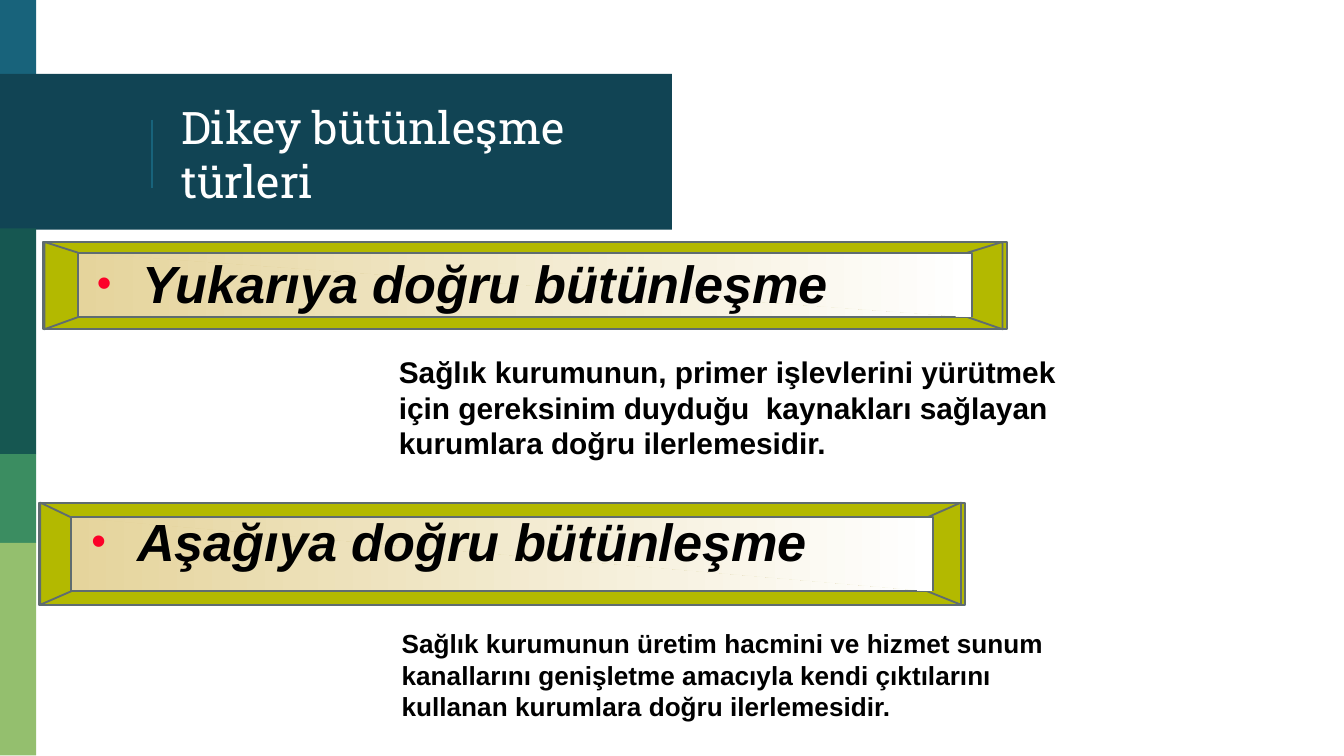
from lxml import etree
from pptx import Presentation
from pptx.dml.color import RGBColor
from pptx.enum import shapes, text
from pptx.oxml import ns
from pptx.util import Inches, Pt

BLUE = RGBColor(0x18, 0x63, 0x7B)
NAVY = RGBColor(0x11, 0x44, 0x54)
PINE = RGBColor(0x16, 0x57, 0x51)
GREEN = RGBColor(0x3B, 0x8D, 0x61)
LIME = RGBColor(0x94, 0xBF, 0x6E)
OLIVE = RGBColor(0xB3, 0xB9, 0x00)
SAND = RGBColor(0xE5, 0xD4, 0x9C)
SLATE = RGBColor(0x5F, 0x6C, 0x70)
RED = RGBColor(0xFC, 0x01, 0x28)
WHITE = RGBColor(0xFF, 0xFF, 0xFF)
BLACK = RGBColor(0, 0, 0)

# Widescreen slide, 16 to 9
deck = Presentation()
deck.slide_width, deck.slide_height = Inches(10), Inches(10 * 9 / 16)
slide = deck.slides.add_slide(deck.slide_layouts[6])
items = slide.shapes


def add_rect(x, y, w, h, color):
    box = items.add_shape(shapes.MSO_SHAPE.RECTANGLE, *map(Inches, (x, y, w, h)))
    box.shadow.inherit = False
    box.fill.solid()
    box.fill.fore_color.rgb = color
    box.line.fill.background()
    return box


def write(box, words, font, frame):
    body = box.text_frame
    for name, value in frame.items():
        setattr(body, name, value)
    para = body.paragraphs[0]
    para.alignment = text.PP_ALIGN.LEFT
    run = para.add_run()
    run.text = words
    for name, value in font.items():
        if name == "color":
            run.font.color.rgb = value
        else:
            setattr(run.font, name, value)
    return para


# Side strip and title band
for x, y, w, h, color in [
    (0, 0, 0.27, 0.58, BLUE),
    (0, 0.55, 5, 1.16, NAVY),
    (0, 1.7, 0.27, 1.68, PINE),
    (0, 3.38, 0.27, 0.66, GREEN),
    (0, 4.04, 0.27, 1.58, LIME),
]:
    add_rect(x, y, w, h, color)

rule = items.add_connector(
    shapes.MSO_CONNECTOR.STRAIGHT, *map(Inches, (1.13, 0.89, 1.13, 1.4)))
rule.line.color.rgb = BLUE
rule.line.width = Pt(0.75)
etree.SubElement(rule._element.spPr, ns.qn("a:effectLst"))

# Title
pad = Inches(0.1)
title = items.add_textbox(*map(Inches, (1.25, 0.58, 3.51, 1.12)))
write(title, "Dikey bütünleşme türleri",
      dict(size=Pt(24), name="Roboto Slab", color=WHITE),
      dict(word_wrap=True, vertical_anchor=text.MSO_ANCHOR.MIDDLE,
           margin_left=pad, margin_right=pad, margin_top=pad, margin_bottom=pad))

# Bevelled panels: outer frame, then the inner face, then the heading
head = dict(size=Pt(28), name="Arial", bold=True, italic=True, color=BLACK)
inset = dict(word_wrap=False, margin_left=Inches(0.09), margin_right=Inches(0.09),
             margin_top=Inches(0.05), margin_bottom=Inches(0.05))
for words, outer, face, slant, label in [
    ("Yukarıya doğru bütünleşme", (0.32, 1.8, 7.49, 2.45),
     (0.58, 1.88, 7.24, 2.36), 7.2, (0.63, 1.82, 5.71, 0.76)),
    ("Aşağıya doğru bütünleşme", (0.29, 3.74, 7.18, 4.5),
     (0.53, 3.85, 6.95, 4.4), 6.9, (0.59, 3.74, 5.58, 0.88)),
]:
    x1, y1, x2, y2 = outer
    a1, b1, a2, b2 = face
    edge = x2 - 0.03
    for points, shaded, close in [
        ([(x1, y1), (x1, y2), (x2, y2), (x2, y1)], False, True),
        ([(x1 + 0.01, y2), (a1, b2), (a1, b1), (x1 + 0.01, y1)], False, True),
        ([(a1, b1), (a1, b2), (a2, b2), (a2, b1)], True, True),
        ([(edge, y2), (slant, b2), (slant, b1), (edge, y1)], False, True),
        ([(a1 + 0.01, b1), (a2 - 0.01, b1), (a2 - 0.01, b2)], True, False),
    ]:
        dots = [(Inches(x), Inches(y)) for x, y in points]
        pen = items.build_freeform(*dots[0])
        pen.add_line_segments(dots[1:], close=close)
        part = pen.convert_to_shape()
        part.shadow.inherit = False
        part.line.color.rgb = SLATE
        part.line.width = Pt(1)
        if shaded:
            part.fill.gradient()
            part.fill.gradient_angle = 0
            for stop, color, place in zip(part.fill.gradient_stops, (SAND, WHITE), (0, 1)):
                stop.color.rgb = color
                stop.position = place
        else:
            part.fill.solid()
            part.fill.fore_color.rgb = OLIVE

    para = write(items.add_textbox(*map(Inches, label)), words, head, inset)
    props = para._p.get_or_add_pPr()
    props.set("marL", str(Inches(0.34)))
    props.set("indent", str(Inches(-0.34)))
    for outer_tag, tag, value in [
        ("a:spcBef", "a:spcPct", "20000"),
        ("a:buClr", "a:srgbClr", str(RED)),
    ]:
        node = etree.SubElement(props, ns.qn(outer_tag))
        etree.SubElement(node, ns.qn(tag)).set("val", value)
    etree.SubElement(props, ns.qn("a:buSzPct")).set("val", "80000")
    etree.SubElement(props, ns.qn("a:buFont")).set("typeface", "Arial")
    etree.SubElement(props, ns.qn("a:buChar")).set("char", "•")

# Explanations on half-clear white
for words, place, size in [
    ("Sağlık kurumunun, primer işlevlerini yürütmek için gereksinim duyduğu  "
     "kaynakları sağlayan kurumlara doğru ilerlemesidir.", (2.87, 2.58, 5.43, 0.91), 16),
    ("Sağlık kurumunun üretim hacmini ve hizmet sunum kanallarını genişletme amacıyla "
     "kendi çıktılarını kullanan kurumlara doğru ilerlemesidir.", (2.89, 4.62, 5.42, 0.81), 14),
]:
    note = add_rect(*place, WHITE)
    tint = note._element.spPr.find(".//" + ns.qn("a:srgbClr"))
    etree.SubElement(tint, ns.qn("a:alpha")).set("val", "50000")
    write(note, words, dict(size=Pt(size), name="Arial", bold=True, color=BLACK),
          dict(word_wrap=True, vertical_anchor=text.MSO_ANCHOR.TOP,
               margin_left=pad, margin_right=pad))

deck.save("out.pptx")
